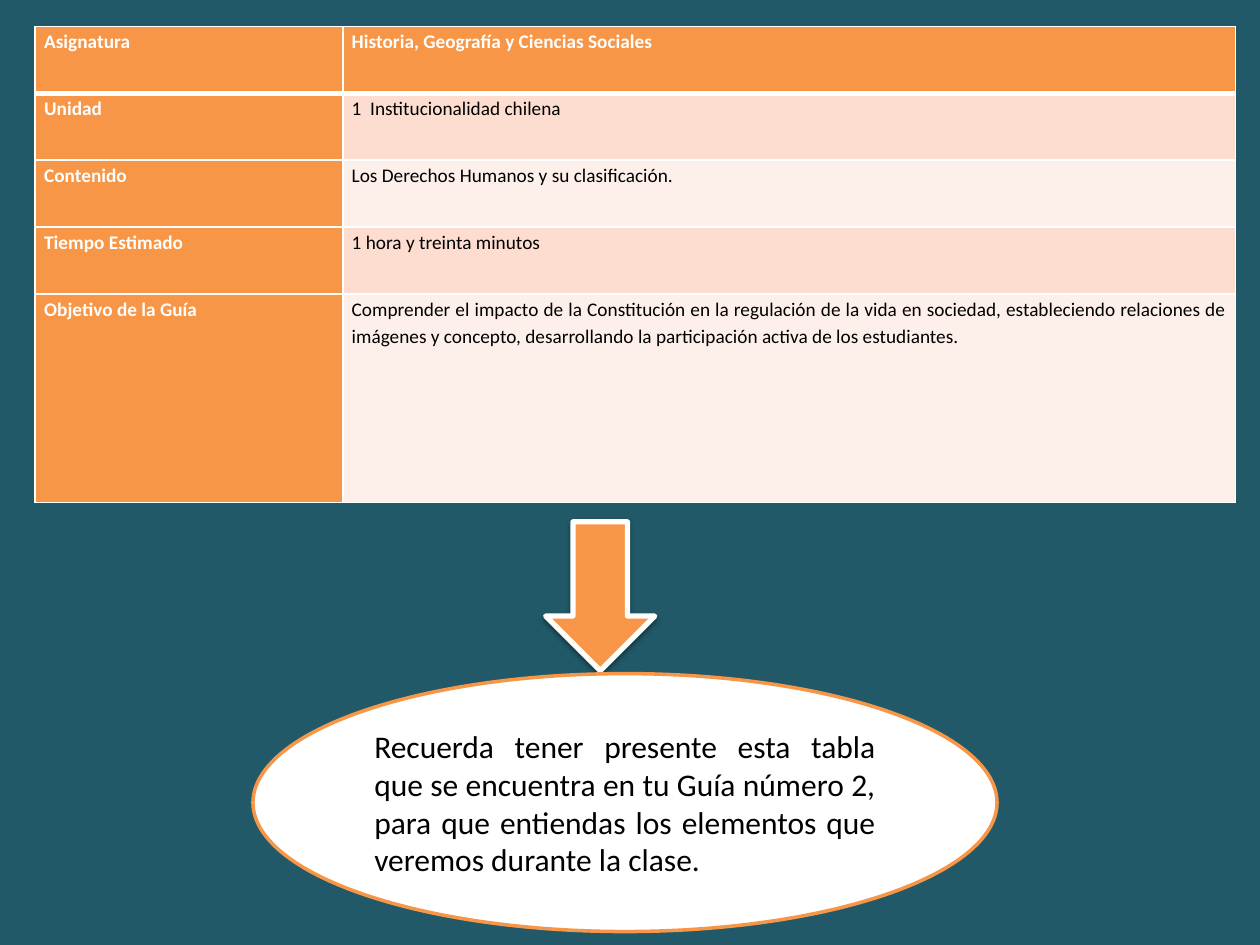
from dataclasses import dataclass

from lxml.etree import SubElement
from pptx import Presentation
from pptx.dml.color import RGBColor
from pptx.enum.shapes import MSO_SHAPE as Shape
from pptx.enum.text import MSO_ANCHOR as Anchor, PP_ALIGN as Align
from pptx.oxml.ns import qn
from pptx.util import Cm, Pt


@dataclass(frozen=True)
class Theme:
    background: str = "215968"
    accent: str = "F79646"
    white: str = "FFFFFF"
    black: str = "000000"
    bands: tuple[str, str] = ("FCDDCF", "FDEFE9")
    font: str = "Calibri"
    table_size: float = 11
    note_size: float = 18


@dataclass(frozen=True)
class GuideRow:
    label: str
    value: str
    height: float = 1.35
    align: Align = Align.LEFT


@dataclass(frozen=True)
class Box:
    left: float
    top: float
    width: float
    height: float

    def emu(self) -> tuple:
        return Cm(self.left), Cm(self.top), Cm(self.width), Cm(self.height)


THEME = Theme()
COLUMNS = (6.2, 18.0)
ROWS = (
    GuideRow("Asignatura", "Historia, Geografía y Ciencias Sociales"),
    GuideRow("Unidad", "1  Institucionalidad chilena"),
    GuideRow("Contenido", "Los Derechos Humanos y su clasificación."),
    GuideRow("Tiempo Estimado", "1 hora y treinta minutos"),
    GuideRow(
        "Objetivo de la Guía",
        "Comprender el impacto de la Constitución en la regulación de la vida en "
        "sociedad, estableciendo relaciones de imágenes y concepto, desarrollando "
        "la participación activa de los estudiantes.",
        4.2,
        Align.JUSTIFY,
    ),
)
REMINDER = (
    "Recuerda tener presente esta tabla que se encuentra en tu Guía número 2, "
    "para que entiendas los elementos que veremos durante la clase."
)


def rgb(color: str) -> RGBColor:
    return RGBColor.from_string(color)


def write(tf, text: str, *, size: float, color: str, bold: bool = False,
          align: Align = Align.LEFT, spacing: float = 1.0) -> None:
    p = tf.paragraphs[0]
    p.alignment, p.line_spacing = align, spacing
    r = p.add_run()
    r.text = text
    r.font.name, r.font.size, r.font.bold = THEME.font, Pt(size), bold
    r.font.color.rgb = rgb(color)


def add_borders(cell, **widths: float) -> None:
    """Draw white cell borders; must run before the fill is set."""
    props = cell._tc.get_or_add_tcPr()
    for side in "LRTB":
        line = SubElement(props, qn(f"a:ln{side}"), w=str(Pt(widths.get(side, 1))))
        fill = SubElement(line, qn("a:solidFill"))
        SubElement(fill, qn("a:srgbClr"), val=THEME.white)


def add_guide_table(s, left: float, top: float) -> None:
    box = Box(left, top, sum(COLUMNS), sum(row.height for row in ROWS))
    table = s.shapes.add_table(len(ROWS), len(COLUMNS), *box.emu()).table
    for column, width in zip(table.columns, COLUMNS):
        column.width = Cm(width)
    for i, row in enumerate(ROWS):
        table.rows[i].height = Cm(row.height)
        for j, text in enumerate((row.label, row.value)):
            heading = i == 0 or j == 0
            cell = table.cell(i, j)
            cell.margin_left = cell.margin_right = Cm(0.18)
            cell.margin_top = cell.margin_bottom = 0
            add_borders(cell, T=3 if i == 1 else 1, B=3 if i == 0 else 1)
            cell.fill.solid()
            cell.fill.fore_color.rgb = rgb(
                THEME.accent if heading else THEME.bands[(i - 1) % 2])
            write(cell.text_frame, text, size=THEME.table_size, bold=heading,
                  color=THEME.white if heading else THEME.black,
                  align=row.align if j else Align.LEFT, spacing=1.15)


def add_outlined(s, kind: Shape, box: Box, fill: str, line: str, width: float):
    sp = s.shapes.add_shape(kind, *box.emu())
    sp.shadow.inherit = False
    sp.fill.solid()
    sp.fill.fore_color.rgb = rgb(fill)
    sp.line.color.rgb = rgb(line)
    sp.line.width = Pt(width)
    return sp


def add_drop_shadow(sp) -> None:
    effects = sp._element.spPr.find(qn("a:effectLst"))
    shadow = SubElement(effects, qn("a:outerShdw"), blurRad=str(Pt(3.1)),
                        dist=str(Pt(1.6)), dir="5400000", rotWithShape="0")
    color = SubElement(shadow, qn("a:srgbClr"), val=THEME.black)
    SubElement(color, qn("a:alpha"), val="38000")


def main() -> None:
    prs = Presentation()
    prs.slide_width, prs.slide_height = Cm(25.4), Cm(19.05)
    s = prs.slides.add_slide(prs.slide_layouts[6])
    s.background.fill.solid()
    s.background.fill.fore_color.rgb = rgb(THEME.background)

    add_guide_table(s, 0.71, 0.53)
    arrow = add_outlined(s, Shape.DOWN_ARROW, Box(11, 10.52, 2.2, 3),
                         THEME.accent, THEME.white, 3)
    add_drop_shadow(arrow)
    note = add_outlined(s, Shape.OVAL, Box(5.1, 13.58, 15, 5.2),
                        THEME.white, THEME.accent, 2)
    tf = note.text_frame
    tf.word_wrap = True
    tf.vertical_anchor = Anchor.MIDDLE
    write(tf, REMINDER, size=THEME.note_size, color=THEME.black, align=Align.JUSTIFY)

    prs.save("out.pptx")


if __name__ == "__main__":
    main()
